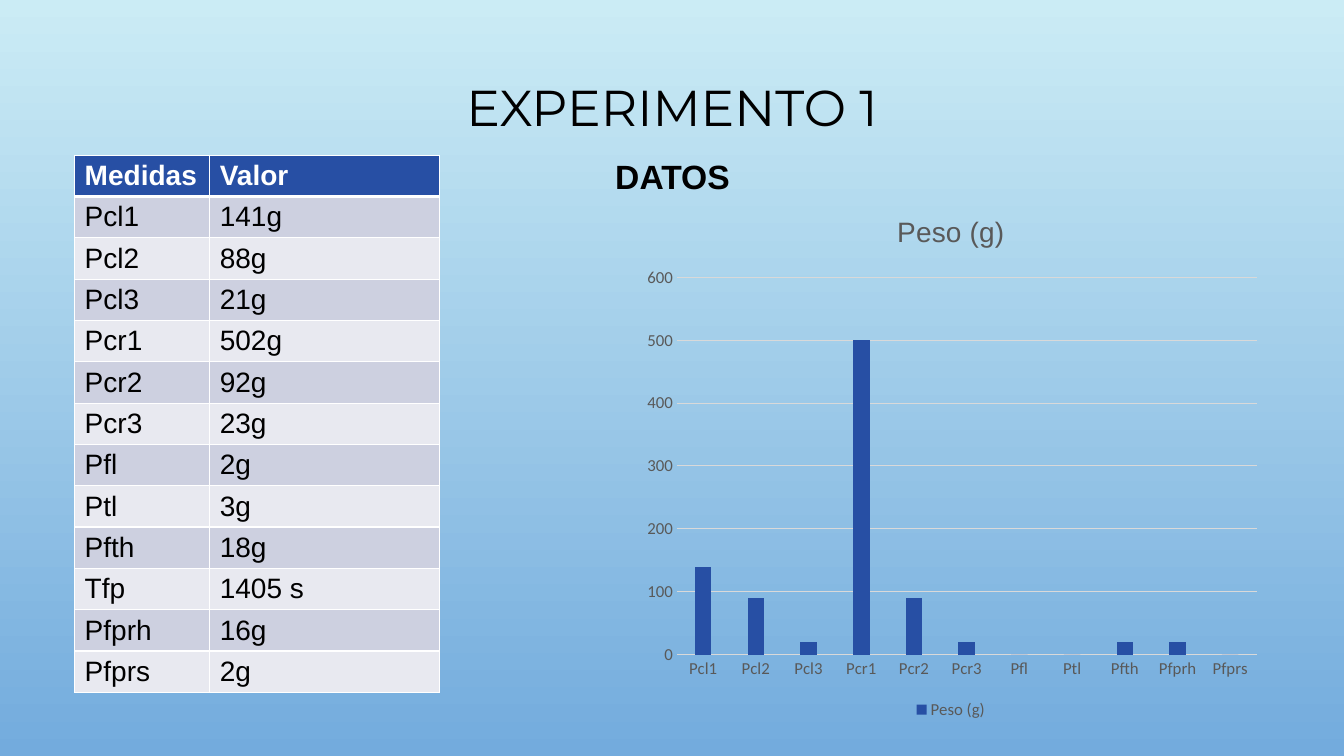
import lxml.etree
import pptx
import pptx.chart.data
import pptx.dml.color
import pptx.enum.chart
import pptx.enum.text
import pptx.oxml
import pptx.oxml.ns
import pptx.util

Inches = pptx.util.Inches
Pt = pptx.util.Pt
RGBColor = pptx.dml.color.RGBColor
qn = pptx.oxml.ns.qn

SKY_TOP = RGBColor(0xCB, 0xEC, 0xF5)
SKY_BOTTOM = RGBColor(0x73, 0xAB, 0xDD)
BLUE = RGBColor(0x27, 0x4F, 0xA4)
BAND_DARK = RGBColor(0xCD, 0xD0, 0xE0)
BAND_LIGHT = RGBColor(0xE8, 0xE9, 0xF0)
BLACK = RGBColor(0, 0, 0)
WHITE = RGBColor(0xFF, 0xFF, 0xFF)
GRAY = RGBColor(0x59, 0x59, 0x59)
LINE_GRAY = RGBColor(0xD9, 0xD9, 0xD9)

MEASURES = [
    ("Pcl1", 141, "g"), ("Pcl2", 88, "g"), ("Pcl3", 21, "g"),
    ("Pcr1", 502, "g"), ("Pcr2", 92, "g"), ("Pcr3", 23, "g"),
    ("Pfl", 2, "g"), ("Ptl", 3, "g"), ("Pfth", 18, "g"),
    ("Tfp", 1405, " s"), ("Pfprh", 16, "g"), ("Pfprs", 2, "g"),
]


def style_font(font, size, name, color, bold=False):
    """Set the size, typeface, colour and weight of a font."""
    font.size = Pt(size)
    font.name = name
    font.color.rgb = color
    font.bold = bold


def paint_background(slide):
    """Fill the slide with a gradient from top to bottom."""
    fill = slide.background.fill
    fill.gradient()
    fill.gradient_angle = 270
    for stop, color in zip(fill.gradient_stops, (SKY_TOP, SKY_BOTTOM)):
        stop.color.rgb = color


def add_heading(slide, text, box, size, name, bold, anchor, spacing):
    """Add a centred line of text."""
    shape = slide.shapes.add_textbox(*map(Inches, box))
    text_frame = shape.text_frame
    text_frame.word_wrap = True
    text_frame.vertical_anchor = anchor
    text_frame.text = text
    paragraph = text_frame.paragraphs[0]
    paragraph.alignment = pptx.enum.text.PP_ALIGN.CENTER
    paragraph.line_spacing = spacing
    style_font(paragraph.runs[0].font, size, name, BLACK, bold)


def add_borders(cell, bottom_width):
    """Draw white borders on the four sides of a cell."""
    properties = cell._tc.get_or_add_tcPr()
    for side, width in (("L", 1), ("R", 1), ("T", 1), ("B", bottom_width)):
        line = lxml.etree.SubElement(properties, qn(f"a:ln{side}"), w=str(Pt(width)))
        fill = lxml.etree.SubElement(line, qn("a:solidFill"))
        lxml.etree.SubElement(fill, qn("a:srgbClr"), val=str(WHITE))


def add_measure_table(slide):
    """Add the banded table of measures."""
    rows = [("Medidas", "Valor")]
    rows += [(name, f"{value}{unit}") for name, value, unit in MEASURES]
    row_height = 0.41
    table = slide.shapes.add_table(
        len(rows), 2, Inches(0.74), Inches(1.54),
        Inches(3.62), Inches(row_height * len(rows))).table
    for column, width in zip(table.columns, (1.34, 2.28)):
        column.width = Inches(width)
    for row_index, texts in enumerate(rows):
        header = row_index == 0
        band = BAND_DARK if row_index % 2 else BAND_LIGHT
        table.rows[row_index].height = Inches(row_height)
        for column_index, text in enumerate(texts):
            cell = table.cell(row_index, column_index)
            add_borders(cell, 3 if header else 1)
            cell.fill.solid()
            cell.fill.fore_color.rgb = BLUE if header else band
            cell.vertical_anchor = pptx.enum.text.MSO_ANCHOR.MIDDLE
            cell.margin_top = cell.margin_bottom = Inches(0.03)
            cell.text_frame.text = text
            font = cell.text_frame.paragraphs[0].runs[0].font
            style_font(font, 20, "Arial", WHITE if header else BLACK, header)


def style_line(line):
    """Make a chart line thin and light gray."""
    line.color.rgb = LINE_GRAY
    line.width = Pt(0.75)


def place_plot(chart, **fractions):
    """Fix the inner plot area as fractions of the chart."""
    plot_area = chart._chartSpace.chart.plotArea
    for old_layout in plot_area.findall(qn("c:layout")):
        plot_area.remove(old_layout)
    layout = lxml.etree.Element(qn("c:layout"))
    manual = lxml.etree.SubElement(layout, qn("c:manualLayout"))
    settings = {"layoutTarget": "inner", "xMode": "edge", "yMode": "edge", **fractions}
    for tag, value in settings.items():
        lxml.etree.SubElement(manual, qn(f"c:{tag}"), val=str(value))
    plot_area.insert(0, layout)


def add_weight_chart(slide):
    """Add the column chart of the weights, rounded to tens of grams."""
    weights = [(name, round(value, -1)) for name, value, unit in MEASURES if unit == "g"]
    data = pptx.chart.data.CategoryChartData()
    data.categories = [name for name, value in weights]
    data.add_series("Peso (g)", [value for name, value in weights])
    chart = slide.shapes.add_chart(
        pptx.enum.chart.XL_CHART_TYPE.COLUMN_CLUSTERED,
        Inches(6.27), Inches(1.91), Inches(6.32), Inches(5.27), data).chart
    style_font(chart.font, 10, "Calibri", BLACK)

    chart.has_title = True
    title_frame = chart.chart_title.text_frame
    title_frame.text = "Peso (g)"
    style_font(title_frame.paragraphs[0].runs[0].font, 20, "Arial", GRAY)
    chart.chart_title.include_in_layout = False

    chart.has_legend = True
    chart.legend.position = pptx.enum.chart.XL_LEGEND_POSITION.BOTTOM
    chart.legend.include_in_layout = False
    style_font(chart.legend.font, 12, "Calibri", GRAY)

    for axis in (chart.category_axis, chart.value_axis):
        axis.major_tick_mark = pptx.enum.chart.XL_TICK_MARK.NONE
        axis.minor_tick_mark = pptx.enum.chart.XL_TICK_MARK.NONE
        style_font(axis.tick_labels.font, 12, "Calibri", GRAY)
    style_line(chart.category_axis.format.line)
    chart.value_axis.format.line.fill.background()
    chart.value_axis.has_major_gridlines = True
    style_line(chart.value_axis.major_gridlines.format.line)
    chart.value_axis.minimum_scale = 0
    chart.value_axis.maximum_scale = 600
    chart.value_axis.major_unit = 100

    plot = chart.plots[0]
    plot.gap_width = 219
    plot.overlap = -27
    plot.vary_by_categories = False
    plot.series[0].format.fill.solid()
    plot.series[0].format.fill.fore_color.rgb = BLUE
    place_plot(chart, x=0.07, y=0.16, w=0.91, h=0.71)


def main():
    """Build the slide and save it."""
    presentation = pptx.Presentation()
    presentation.slide_width = Inches(13.33)
    presentation.slide_height = Inches(7.5)
    slide = presentation.slides.add_slide(presentation.slide_layouts[6])
    anchors = pptx.enum.text.MSO_ANCHOR
    paint_background(slide)
    add_heading(slide, "EXPERIMENTO 1", (1, 0.22, 11.33, 1.75),
                36, "Montserrat", False, anchors.MIDDLE, 0.9)
    add_heading(slide, "DATOS", (4.47, 1.42, 4.4, 0.55),
                24, "Arial", True, anchors.TOP, 1.2)
    add_measure_table(slide)
    add_weight_chart(slide)
    presentation.save("out.pptx")


if __name__ == "__main__":
    main()
